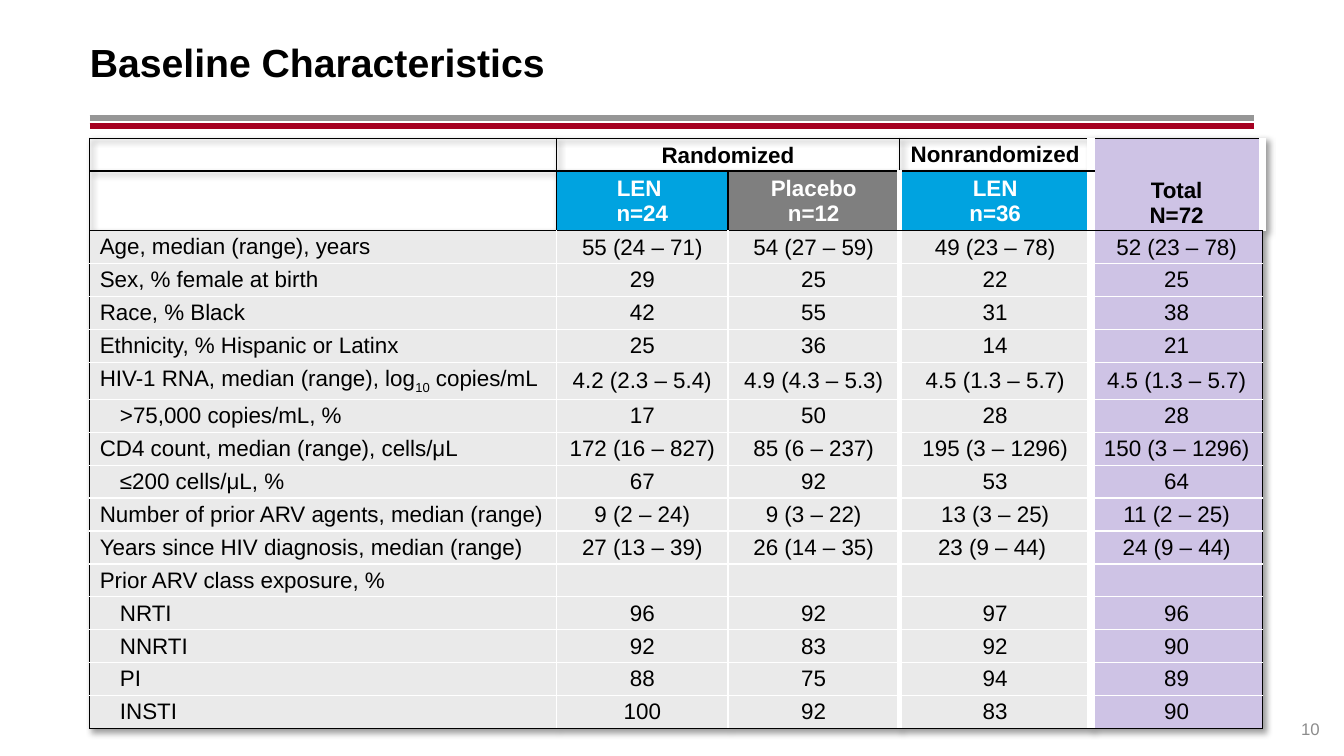
from dataclasses import dataclass
from typing import Optional

from lxml import etree
from pptx import Presentation
from pptx.dml.color import RGBColor
from pptx.enum.shapes import MSO_CONNECTOR
from pptx.enum.text import MSO_ANCHOR, PP_ALIGN
from pptx.oxml import parse_xml
from pptx.oxml.ns import nsdecls, qn
from pptx.util import Inches, Pt

STRAIGHT = MSO_CONNECTOR.STRAIGHT
MIDDLE, BOTTOM = MSO_ANCHOR.MIDDLE, MSO_ANCHOR.BOTTOM
LEFT, CENTER, RIGHT = PP_ALIGN.LEFT, PP_ALIGN.CENTER, PP_ALIGN.RIGHT
TITLE_ONLY = 5


@dataclass(frozen=True)
class Theme:
    font: str = "Arial"
    black: str = "000000"
    white: str = "FFFFFF"
    page_number: str = "8C8C8C"
    rule_gray: str = "969696"
    rule_red: str = "A50021"
    drug: str = "00A3E0"
    placebo: str = "7F7F7F"
    body: str = "EAEAEA"
    total: str = "CEC3E5"
    title_size: float = 28
    table_size: float = 16
    number_size: float = 12


THEME = Theme()


@dataclass(frozen=True)
class Rule:
    top: float
    color: str


@dataclass(frozen=True)
class Header:
    row: int
    column: int
    text: str
    fill: Optional[str] = None
    color: str = THEME.black
    anchor: MSO_ANCHOR = MIDDLE
    last_row: Optional[int] = None
    last_column: Optional[int] = None


@dataclass(frozen=True)
class Measure:
    label: str
    values: tuple = ("", "", "", "")
    indent: float = 0


RULES = [Rule(1.17, THEME.rule_gray), Rule(1.25, THEME.rule_red)]
LEFT_EDGE, RIGHT_EDGE = 0.89, 12.44
TABLE_TOP, TABLE_HEIGHT = 1.37, 5.82
COLUMN_WIDTHS = [4.63, 1.7, 1.7, 1.9, 1.7]
GROUP_ROW_HEIGHT = 0.59
HEADER_ROWS = 2
# White line to the right of each column but the last, in points
DIVIDERS = [1, 1, 4.5, 6]
HEADER_DIVIDERS = [[0, 0, 0, 6], [0, 0, 4.5, 6]]

HEADERS = [
    Header(0, 1, "Randomized", anchor=BOTTOM, last_column=2),
    Header(0, 3, "Nonrandomized"),
    Header(0, 4, "Total\nN=72", THEME.total, anchor=BOTTOM, last_row=1),
    Header(1, 1, "LEN \nn=24", THEME.drug, THEME.white),
    Header(1, 2, "Placebo\nn=12", THEME.placebo, THEME.white),
    Header(1, 3, "LEN\nn=36", THEME.drug, THEME.white),
]
MEASURES = [
    Measure("Age, median (range), years", ("55 (24 – 71)", "54 (27 – 59)", "49 (23 – 78)", "52 (23 – 78)")),
    Measure("Sex, % female at birth", ("29", "25", "22", "25")),
    Measure("Race, % Black", ("42", "55", "31", "38")),
    Measure("Ethnicity, % Hispanic or Latinx", ("25", "36", "14", "21")),
    Measure("HIV-1 RNA, median (range), log~10~ copies/mL",
            ("4.2 (2.3 – 5.4)", "4.9 (4.3 – 5.3)", "4.5 (1.3 – 5.7)", "4.5 (1.3 – 5.7)")),
    Measure(">75,000 copies/mL, %", ("17", "50", "28", "28"), 0.2),
    Measure("CD4 count, median (range), cells/μL",
            ("172 (16 – 827)", "85 (6 – 237)", "195 (3 – 1296)", "150 (3 – 1296)")),
    Measure("≤200 cells/μL, %", ("67", "92", "53", "64"), 0.2),
    Measure("Number of prior ARV agents, median (range)",
            ("9 (2 – 24)", "9 (3 – 22)", "13 (3 – 25)", "11 (2 – 25)")),
    Measure("Years since HIV diagnosis, median (range)",
            ("27 (13 – 39)", "26 (14 – 35)", "23 (9 – 44) ", "24 (9 – 44)")),
    Measure("Prior ARV class exposure, %"),
    Measure("NRTI", ("96", "92", "97", "96"), 0.2),
    Measure("NNRTI", ("92", "83", "92", "90"), 0.2),
    Measure("PI", ("88", "75", "94", "89"), 0.2),
    Measure("INSTI", ("100", "92", "83", "90"), 0.2),
]


def write(frame, text: str, *, size: float, color: str = THEME.black, bold: bool = False,
          align: PP_ALIGN = LEFT, indent: float = 0) -> None:
    """Write one paragraph per line; text between tildes is subscript."""
    for index, line in enumerate(text.split("\n")):
        para = frame.add_paragraph() if index else frame.paragraphs[0]
        para.alignment = align
        if indent:
            para._p.get_or_add_pPr().set("marL", str(Inches(indent)))
        if not line:
            etree.SubElement(para._p, qn("a:endParaRPr"), sz=str(int(size * 100)))
            continue
        for part, words in enumerate(line.split("~")):
            span = para.add_run()
            span.text = words
            span.font.name = THEME.font
            span.font.size = Pt(size)
            span.font.bold = bold
            span.font.color.rgb = RGBColor.from_string(color)
            if part % 2:
                span._r.get_or_add_rPr().set("baseline", "-25000")


def set_insets(target, left: float, top: float, right: float, bottom: float) -> None:
    target.margin_left, target.margin_top = Inches(left), Inches(top)
    target.margin_right, target.margin_bottom = Inches(right), Inches(bottom)


def add_rule(page, rule: Rule) -> None:
    line = page.shapes.add_connector(STRAIGHT, Inches(LEFT_EDGE), Inches(rule.top),
                                     Inches(RIGHT_EDGE), Inches(rule.top))
    line.line.color.rgb = RGBColor.from_string(rule.color)
    line.line.width = Pt(4.25)
    etree.SubElement(line._element.spPr, qn("a:effectLst"))


def format_title(page) -> None:
    title = page.shapes.title
    title.left, title.top = Inches(LEFT_EDGE), Inches(0.18)
    title.width, title.height = Inches(11.55), Inches(0.86)
    title.fill.solid()
    title.fill.fore_color.rgb = RGBColor.from_string(THEME.white)
    title.text_frame.vertical_anchor = MIDDLE
    set_insets(title.text_frame, 0, 0.05, 0.1, 0.05)
    write(title.text_frame, "Baseline Characteristics", size=THEME.title_size, bold=True)


def add_page_number(page) -> None:
    box = page.shapes.add_textbox(Inches(12.44), Inches(6.93), Inches(0.65), Inches(0.4))
    box.text_frame.word_wrap = True
    box.text_frame.vertical_anchor = BOTTOM
    set_insets(box.text_frame, 0, 0, 0, 0)
    write(box.text_frame, "10", size=THEME.number_size, color=THEME.page_number, align=RIGHT)


def set_borders(cell, row: int, column: int, row_count: int) -> None:
    dividers = HEADER_DIVIDERS[row] if row < HEADER_ROWS else DIVIDERS
    padded = [0, *dividers, 0]
    widths = {
        "lnL": padded[column],
        "lnR": padded[column + 1],
        "lnT": int(row > HEADER_ROWS),
        "lnB": int(HEADER_ROWS <= row < row_count - 1 or column == 4 and row < HEADER_ROWS),
    }
    for side, width in widths.items():
        if width:
            cell._tc.get_or_add_tcPr().append(parse_xml(
                f'<a:{side} {nsdecls("a")} w="{Pt(width)}"><a:solidFill>'
                f'<a:srgbClr val="{THEME.white}"/></a:solidFill></a:{side}>'))


def fill_cell(cell, text: str, *, fill: Optional[str] = None, anchor: MSO_ANCHOR = MIDDLE, **text_format) -> None:
    cell.vertical_anchor = anchor
    set_insets(cell, 0.1, 0.03, 0.1, 0.03)
    if fill:
        cell.fill.solid()
        cell.fill.fore_color.rgb = RGBColor.from_string(fill)
    else:
        cell.fill.background()
    write(cell.text_frame, text, size=THEME.table_size, **text_format)


def add_shadow(table) -> None:
    properties = table._tbl.tblPr
    properties.remove(properties.find(qn("a:tableStyleId")))
    properties.append(parse_xml(
        f'<a:effectLst {nsdecls("a")}><a:outerShdw blurRad="50800" dist="38100" dir="2700000">'
        f'<a:srgbClr val="{THEME.black}"><a:alpha val="40000"/></a:srgbClr></a:outerShdw></a:effectLst>'))


def add_baseline_table(page) -> None:
    row_count = HEADER_ROWS + len(MEASURES)
    table = page.shapes.add_table(row_count, len(COLUMN_WIDTHS), Inches(LEFT_EDGE), Inches(TABLE_TOP),
                                  Inches(sum(COLUMN_WIDTHS)), Inches(TABLE_HEIGHT)).table
    table.first_row = table.horz_banding = False
    add_shadow(table)
    for column, width in zip(table.columns, COLUMN_WIDTHS):
        column.width = Inches(width)
    for index, row in enumerate(table.rows):
        row.height = Inches(GROUP_ROW_HEIGHT if index == 1 else (TABLE_HEIGHT - GROUP_ROW_HEIGHT) / (row_count - 1))
        for column, cell in enumerate(row.cells):
            set_borders(cell, index, column, row_count)

    headers = {(header.row, header.column): header for header in HEADERS}
    for row in range(HEADER_ROWS):
        for column in range(len(COLUMN_WIDTHS)):
            header = headers.get((row, column), Header(row, column, ""))
            fill_cell(table.cell(row, column), header.text, fill=header.fill, anchor=header.anchor,
                      color=header.color, bold=True, align=CENTER)
    for header in HEADERS:
        if header.last_row is not None or header.last_column is not None:
            table.cell(header.row, header.column).merge(
                table.cell(header.last_row or header.row, header.last_column or header.column))

    for row, measure in enumerate(MEASURES, HEADER_ROWS):
        fill_cell(table.cell(row, 0), measure.label, fill=THEME.body, indent=measure.indent)
        for column, value in enumerate(measure.values, 1):
            fill = THEME.total if column == len(measure.values) else THEME.body
            fill_cell(table.cell(row, column), value, fill=fill, align=CENTER)
    first_label = table.cell(HEADER_ROWS, 0).text_frame.paragraphs[0]
    first_label.line_spacing, first_label.space_before = 0.9, Pt(12)


def main() -> None:
    deck = Presentation()
    deck.slide_width, deck.slide_height = Inches(13.33), Inches(7.5)
    page = deck.slides.add_slide(deck.slide_layouts[TITLE_ONLY])
    for rule in RULES:
        add_rule(page, rule)
    format_title(page)
    add_page_number(page)
    add_baseline_table(page)
    deck.save("out.pptx")


if __name__ == "__main__":
    main()
